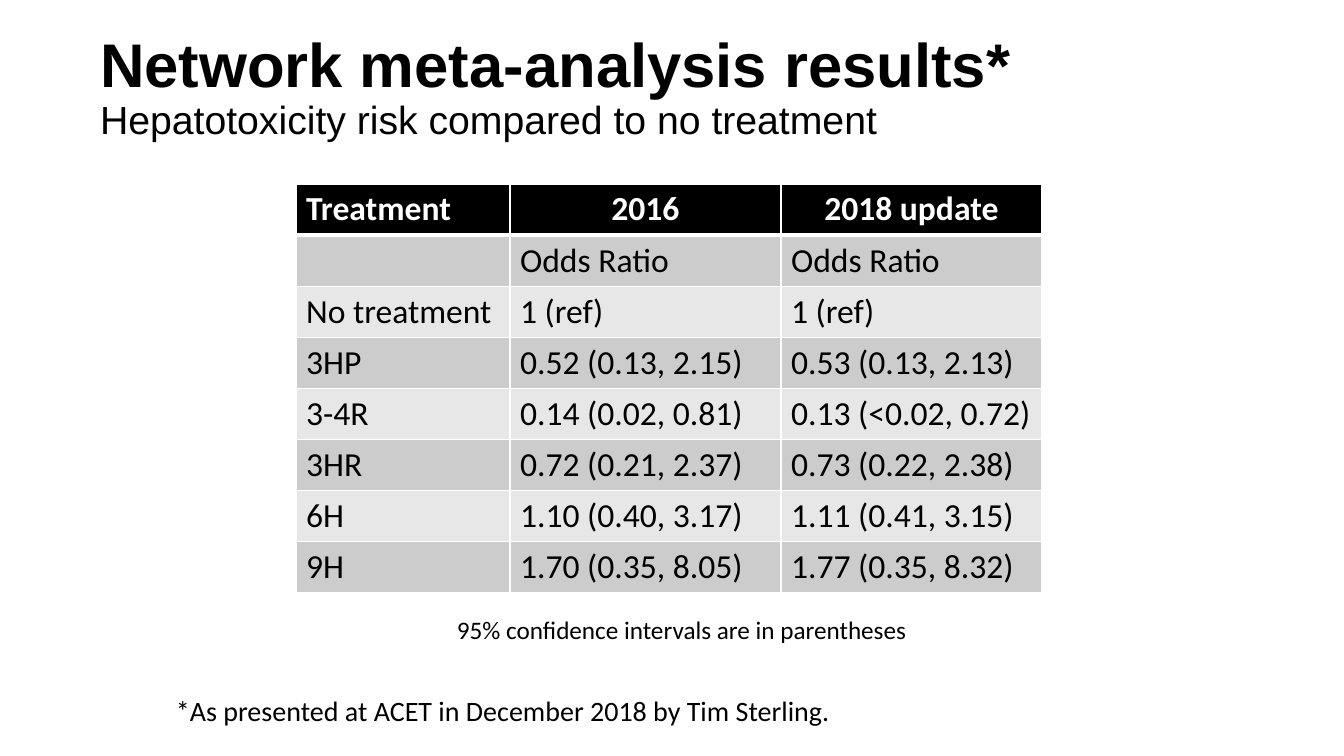
from lxml import etree
from pptx import Presentation
from pptx import util as u
from pptx.dml import color
from pptx.enum import text
from pptx.oxml import ns

PX = 914400 / 100.8
BLACK, WHITE = "000000", "FFFFFF"
DARK_BAND, LIGHT_BAND = "CCCCCC", "E7E7E7"


def px(*lengths):
    return [u.Emu(round(length * PX)) for length in lengths]


def write(paragraph, words, size=24, font="Calibri", hex_color=BLACK, bold=False,
          align=text.PP_ALIGN.LEFT):
    paragraph.alignment = align
    run = paragraph.add_run()
    run.text = words
    run.font.size = u.Pt(size)
    run.font.name = font
    run.font.bold = bold
    run.font.color.rgb = color.RGBColor.from_string(hex_color)


prs = Presentation()
prs.slide_width, prs.slide_height = px(1344, 756)
slide = prs.slides.add_slide(prs.slide_layouts[5])

# Title and subtitle
title = slide.shapes.title
title.left, title.top, title.width, title.height = px(90, 16, 1159, 146)
title.text_frame.auto_size = text.MSO_AUTO_SIZE.NONE
title.text_frame.vertical_anchor = text.MSO_ANCHOR.MIDDLE
heading = title.text_frame.paragraphs[0]
heading.line_spacing = 0.9
write(heading, "Network meta-analysis results*", size=44, font="Arial", bold=True)
heading.add_line_break()
write(heading, "Hepatotoxicity risk compared to no treatment", size=28, font="Arial")

# Odds ratio table
results = [
    ("Treatment", "2016", "2018 update"),
    ("", "Odds Ratio", "Odds Ratio"),
    ("No treatment", "1 (ref)", "1 (ref)"),
    ("3HP", "0.52 (0.13, 2.15)", "0.53 (0.13, 2.13)"),
    ("3-4R", "0.14 (0.02, 0.81)", "0.13 (<0.02, 0.72)"),
    ("3HR", "0.72 (0.21, 2.37)", "0.73 (0.22, 2.38)"),
    ("6H", "1.10 (0.40, 3.17)", "1.11 (0.41, 3.15)"),
    ("9H", "1.70 (0.35, 8.05)", "1.77 (0.35, 8.32)"),
]
row_height = 51
column_widths = px(214, 271, 261)
odds = slide.shapes.add_table(
    len(results), len(column_widths), *px(296, 184, 746, row_height * len(results))).table
odds.horz_banding = False
for column, width in zip(odds.columns, column_widths):
    column.width = width

for r, values in enumerate(results):
    odds.rows[r].height = px(row_height)[0]
    header = r == 0
    for c, value in enumerate(values):
        cell = odds.cell(r, c)
        # White rules, heavier below the header
        for side in ("lnL", "lnR", "lnT", "lnB"):
            heavy = (r, side) in ((0, "lnB"), (1, "lnT"))
            rule = etree.SubElement(cell._tc.get_or_add_tcPr(), ns.qn(f"a:{side}"),
                                    w=str(u.Pt(3 if heavy else 1)))
            rule_fill = etree.SubElement(rule, ns.qn("a:solidFill"))
            etree.SubElement(rule_fill, ns.qn("a:srgbClr"), val=WHITE)
        band = BLACK if header else DARK_BAND if r % 2 else LIGHT_BAND
        cell.fill.solid()
        cell.fill.fore_color.rgb = color.RGBColor.from_string(band)
        if value:
            write(cell.text_frame.paragraphs[0], value, bold=header,
                  hex_color=WHITE if header else BLACK,
                  align=text.PP_ALIGN.CENTER if header and c else text.PP_ALIGN.LEFT)

# Notes below the table
notes = [
    ("95% confidence intervals are in parentheses", 18, (447, 609, 498, 40), True),
    ("*As presented at ACET in December 2018 by Tim Sterling.", 20,
     (166, 689, 681, 75), False),
]
for words, size, place, wrap in notes:
    note = slide.shapes.add_textbox(*px(*place)).text_frame
    note.word_wrap = wrap
    write(note.paragraphs[0], words, size=size)

prs.save("out.pptx")
